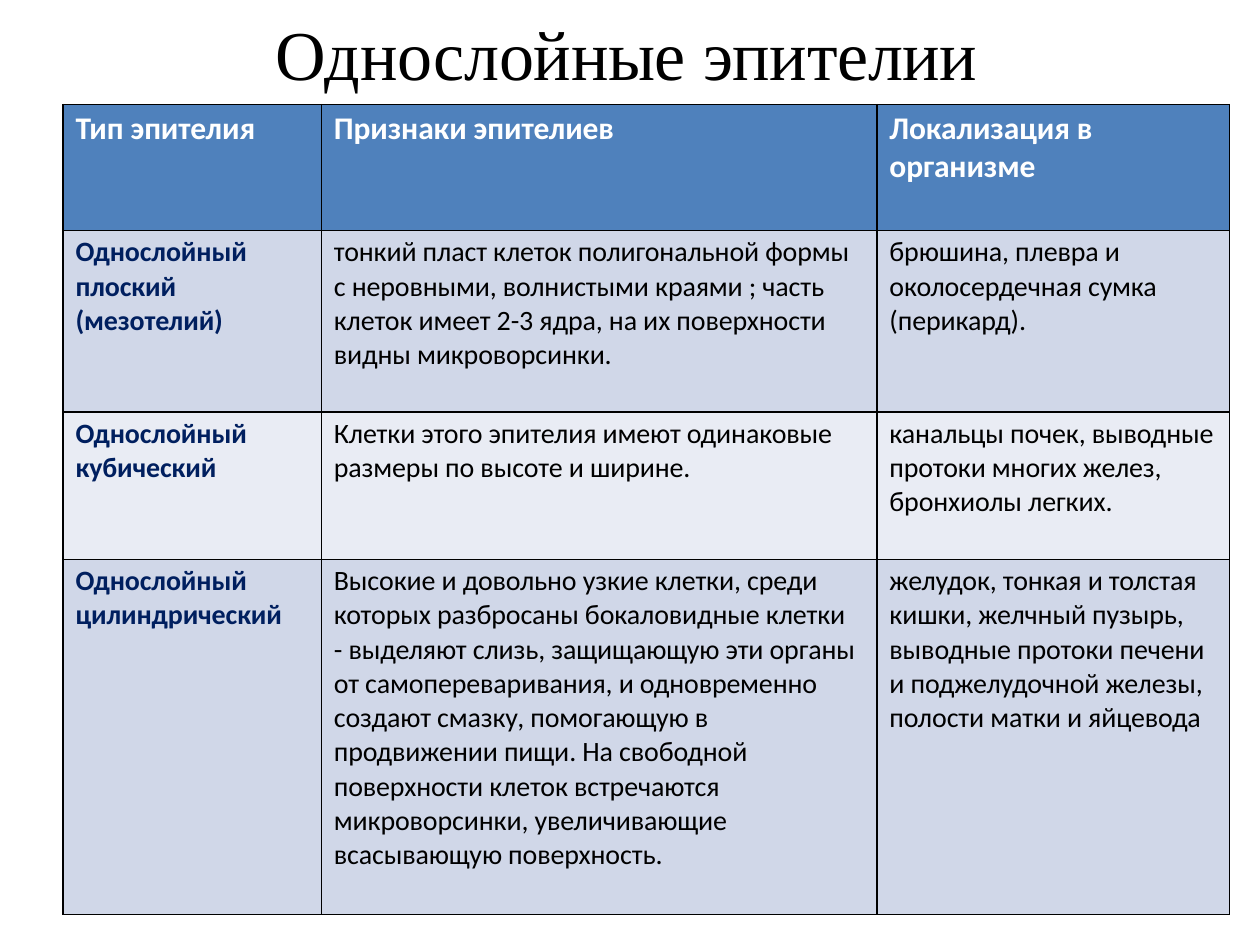
from dataclasses import dataclass

from lxml import etree
from pptx import Presentation
from pptx.dml.color import RGBColor
from pptx.enum.text import MSO_ANCHOR, MSO_AUTO_SIZE, PP_ALIGN
from pptx.oxml.ns import qn
from pptx.util import Pt

LEFT = PP_ALIGN.LEFT
TOP = MSO_ANCHOR.TOP
FIT = MSO_AUTO_SIZE.SHAPE_TO_FIT_TEXT

BLACK = RGBColor(0x00, 0x00, 0x00)
WHITE = RGBColor(0xFF, 0xFF, 0xFF)
NAVY = RGBColor(0x00, 0x1F, 0x5F)
BLUE = RGBColor(0x4F, 0x81, 0xBC)
BAND = RGBColor(0xD0, 0xD7, 0xE8)
PALE = RGBColor(0xE9, 0xEC, 0xF4)

COLS = (147.6, 317.5, 201.6)
INDENT = 7.2

TITLE = {"name": "Times New Roman", "size": Pt(40), "bold": False}
HEAD = {"name": "Calibri", "size": Pt(18), "bold": True}
LABEL = {"name": "Calibri", "size": Pt(16), "bold": True}
BODY = {"name": "Calibri", "size": Pt(16), "bold": False}


@dataclass
class Para:
    text: str
    right: float = 0  # right indent, points


@dataclass
class Row:
    height: float
    fill: RGBColor
    cells: list[list[Para]]


ROWS = [
    Row(72, BLUE, [
        [Para("Тип эпителия")],
        [Para("Признаки эпителиев")],
        [Para("Локализация в организме")],
    ]),
    Row(103.7, BAND, [
        [Para("Однослойный"), Para("плоский"), Para("(мезотелий)")],
        [Para("тонкий пласт клеток полигональной формы с неровными, "
              "волнистыми краями ; часть клеток имеет 2-3 ядра, на их "
              "поверхности видны микроворсинки.", 9)],
        [Para("брюшина, плевра и"), Para("околосердечная сумка"),
         Para("(перикард).")],
    ]),
    Row(84.2, PALE, [
        [Para("Однослойный"), Para("кубический")],
        [Para("Клетки этого эпителия имеют одинаковые"),
         Para("размеры по высоте и ширине.")],
        [Para("канальцы почек, выводные протоки многих желез, "
              "бронхиолы легких.")],
    ]),
    Row(203, BAND, [
        [Para("Однослойный"), Para("цилиндрический")],
        [Para("Высокие и довольно узкие клетки, среди"),
         Para("которых разбросаны бокаловидные клетки"),
         Para("- выделяют слизь, защищающую эти органы от "
              "самопереваривания, и одновременно"),
         Para("создают смазку, помогающую в продвижении пищи. "
              "На свободной поверхности клеток встречаются", 54),
         Para("микроворсинки, увеличивающие всасывающую "
              "поверхность.", 54)],
        [Para("желудок, тонкая и толстая кишки, желчный пузырь, "
              "выводные протоки печени и поджелудочной железы, "
              "полости матки и яйцевода", 8)],
    ]),
]


def put(target, values: dict) -> None:
    for key, value in values.items():
        setattr(target, key, value)


def write(par, text: str, style: dict, color: RGBColor, space: int) -> None:
    """Add one run; space is letter spacing in hundredths of a point."""
    run = par.add_run()
    run.text = text
    put(run.font, style)
    run.font.color.rgb = color
    run._r.get_or_add_rPr().set("spc", str(space))


def edge(cell) -> None:
    props = cell._tc.get_or_add_tcPr()
    for pos, side in enumerate(("lnL", "lnR", "lnT", "lnB")):
        line = etree.Element(qn(f"a:{side}"), w=str(Pt(1)))
        fill = etree.SubElement(line, qn("a:solidFill"))
        etree.SubElement(fill, qn("a:srgbClr"), val=str(BLACK))
        props.insert(pos, line)


def fill_cell(cell, paras: list[Para], fill: RGBColor, style: dict,
              color: RGBColor) -> None:
    put(cell, {"margin_left": 0, "margin_right": 0, "margin_bottom": 0,
               "margin_top": Pt(2.6), "vertical_anchor": TOP})
    cell.fill.solid()
    cell.fill.fore_color.rgb = fill
    edge(cell)
    frame = cell.text_frame
    for num, para in enumerate(paras):
        par = frame.add_paragraph() if num else frame.paragraphs[0]
        par.alignment = LEFT
        props = par._p.get_or_add_pPr()
        props.set("marL", str(Pt(INDENT)))
        props.set("marR", str(Pt(para.right)))
        props.set("indent", "0")
        write(par, para.text, style, color, -5)


def add_title(slide) -> None:
    title = slide.shapes.title
    put(title, {"left": Pt(156.5), "top": Pt(5), "width": Pt(407),
                "height": Pt(50)})
    frame = title.text_frame
    put(frame, {"margin_left": Pt(1), "margin_right": 0, "margin_top": Pt(1),
                "margin_bottom": 0, "vertical_anchor": TOP,
                "word_wrap": True, "auto_size": FIT})
    par = frame.paragraphs[0]
    par.alignment = LEFT
    write(par, "Однослойные эпителии", TITLE, BLACK, -15)


def add_grid(slide) -> None:
    high = sum(row.height for row in ROWS)
    table = slide.shapes.add_table(
        len(ROWS), len(COLS), Pt(36), Pt(59.8), Pt(sum(COLS)), Pt(high)).table
    for col, width in zip(table.columns, COLS):
        col.width = Pt(width)
    for y, row in enumerate(ROWS):
        table.rows[y].height = Pt(row.height)
        for x, paras in enumerate(row.cells):
            if y == 0:
                style, color = HEAD, WHITE
            elif x == 0:
                style, color = LABEL, NAVY
            else:
                style, color = BODY, BLACK
            fill_cell(table.cell(y, x), paras, row.fill, style, color)


def main() -> None:
    deck = Presentation()
    put(deck, {"slide_width": Pt(720), "slide_height": Pt(540)})
    slide = deck.slides.add_slide(deck.slide_layouts[5])  # title only
    add_title(slide)
    add_grid(slide)
    deck.save("out.pptx")


if __name__ == "__main__":
    main()
